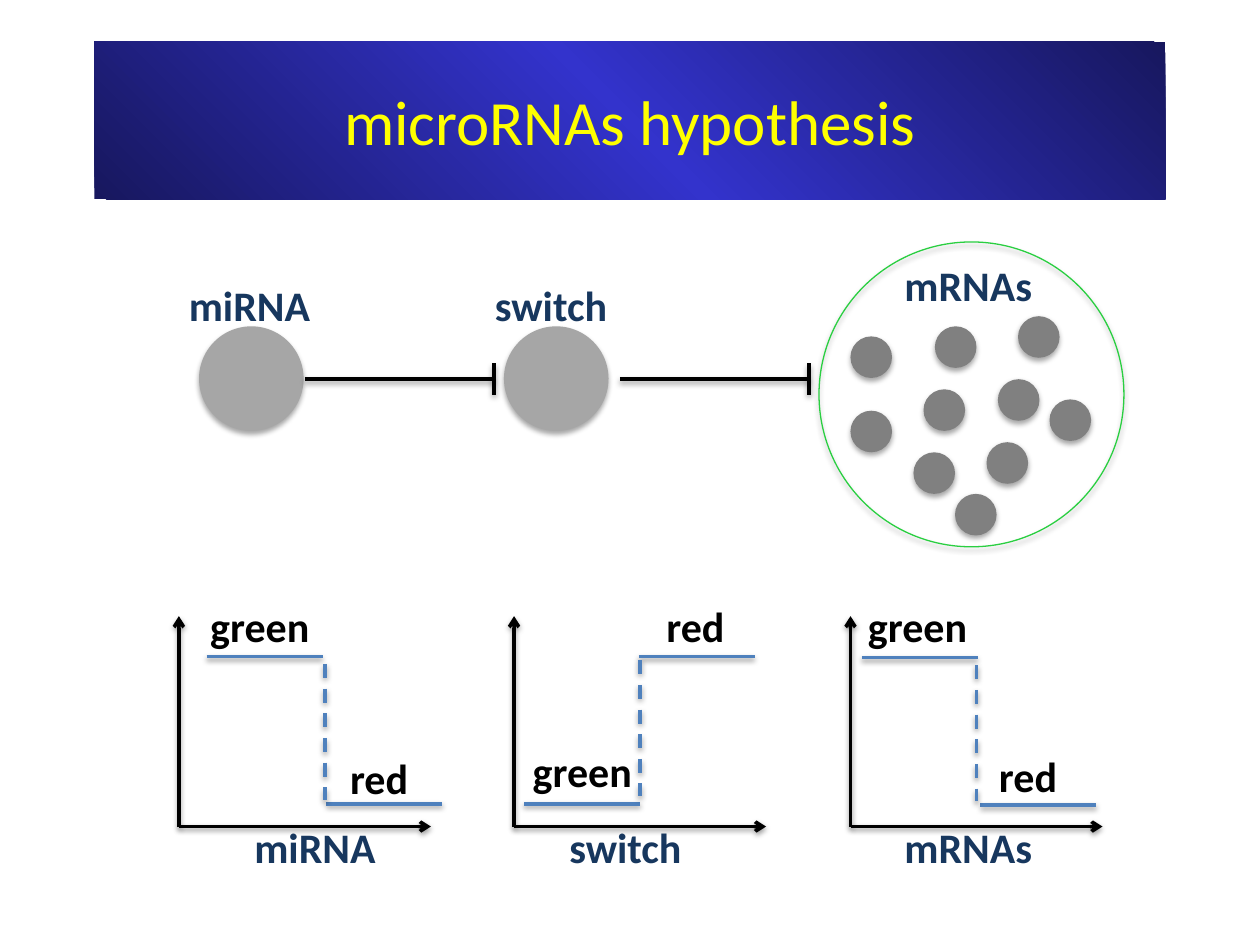
import copy
import pptx
import pptx.util
import pptx.dml.color
import pptx.enum.dml
import pptx.enum.shapes
import pptx.enum.text
import pptx.oxml
from dataclasses import dataclass
from pptx.oxml.ns import qn

Inches = pptx.util.Inches
Pt = pptx.util.Pt
Shape = pptx.enum.shapes.MSO_SHAPE


@dataclass(frozen=True)
class Theme:
    font: str = "Calibri"
    title_size: int = 36
    label_size: int = 24
    title: str = "FFFF00"
    banner_edge: str = "17175E"
    banner_middle: str = "3333CC"
    name: str = "17375E"
    black: str = "000000"
    level: str = "4F81BD"
    node: str = "A6A6A6"
    target: str = "808080"
    ring: str = "2ACF41"
    line_width: float = 2
    ring_width: float = 0.75


THEME = Theme()
WIDTHS = {"miRNA": 1.18, "switch": 1.1, "mRNAs": 1.23, "green": 1, "red": 0.67}
NODE_SIZE, TARGET_SIZE = 0.83, 0.33
AXIS_Y, AXIS_TOP, AXIS_LENGTH = 6.56, 4.89, 2

TARGETS = [
    (6.75, 2.67), (6.75, 3.26), (7.33, 3.09), (7.25, 3.59), (7.83, 3.51),
    (7.92, 3.01), (8.08, 2.51), (8.33, 3.17), (7.42, 2.59), (7.58, 3.92),
]
# Per plot: name, its left, axis x, solid levels (x, y), dashed step, labels
PLOTS = [
    ("miRNA", 1.92, 1.42, [(1.64, 5.21), (2.59, 6.38)], (2.58, 5.27, 6.35),
     [("green", 1.57, 4.72), ("red", 2.68, 5.92)]),
    ("switch", 4.42, 4.08, [(4.16, 6.38), (5.07, 5.21)], (5.08, 5.24, 6.32),
     [("red", 5.19, 4.72), ("green", 4.13, 5.87)]),
    ("mRNAs", 7.08, 6.75, [(6.84, 5.22), (7.78, 6.39)], (7.75, 5.28, 6.36),
     [("green", 6.79, 4.72), ("red", 7.83, 5.91)]),
]
LEVEL_LENGTH = 0.92


def rgb(value):
    return pptx.dml.color.RGBColor.from_string(value)


def add_shadow(item, distance, opacity):
    """Give a shape or connector a soft shadow straight below it."""
    item._element.spPr.append(pptx.oxml.parse_xml(
        '<a:effectLst xmlns:a="http://schemas.openxmlformats.org/drawingml/2006/main">'
        f'<a:outerShdw blurRad="{Pt(3.1)}" dist="{Pt(distance)}" dir="5400000" '
        'rotWithShape="0"><a:srgbClr val="000000">'
        f'<a:alpha val="{opacity * 1000}"/></a:srgbClr></a:outerShdw></a:effectLst>'))


def add_line(page, start, end, color=THEME.black, dashed=False, arrow=False):
    line = page.shapes.add_connector(
        pptx.enum.shapes.MSO_CONNECTOR.STRAIGHT, *map(Inches, (*start, *end)))
    line.line.color.rgb = rgb(color)
    line.line.width = Pt(THEME.line_width)
    if dashed:
        line.line.dash_style = pptx.enum.dml.MSO_LINE.DASH
    if arrow:
        tail = line.line._get_or_add_ln().makeelement(qn("a:tailEnd"), {"type": "arrow"})
        line.line._get_or_add_ln().append(tail)
    add_shadow(line, 1.6, 38)


def add_circle(page, left, top, size, fill=None, outline=None):
    circle = page.shapes.add_shape(
        Shape.OVAL, *map(Inches, (left, top, size, size)))
    if fill:
        circle.fill.solid()
        circle.fill.fore_color.rgb = rgb(fill)
    else:
        circle.fill.background()
    if outline:
        circle.line.color.rgb = rgb(outline)
        circle.line.width = Pt(THEME.ring_width)
    else:
        circle.line.fill.background()
    add_shadow(circle, 1.8, 35)


def write(para, text, size, color, bold):
    span = para.add_run()
    span.text = text
    for key, value in {"name": THEME.font, "size": Pt(size), "bold": bold}.items():
        setattr(span.font, key, value)
    span.font.color.rgb = rgb(color)


def add_label(page, text, left, top, color=THEME.black):
    box = page.shapes.add_textbox(*map(Inches, (left, top, WIDTHS[text], 0.5)))
    frame = box.text_frame
    frame.word_wrap = False
    frame.auto_size = pptx.enum.text.MSO_AUTO_SIZE.SHAPE_TO_FIT_TEXT
    write(frame.paragraphs[0], text, THEME.label_size, color, True)


def add_banner(page, text):
    banner = page.shapes.add_shape(
        Shape.RECTANGLE, *map(Inches, (0.75, 0.33, 8.5, 1.25)))
    banner.shadow.inherit = False
    banner.line.fill.background()
    banner.fill.gradient()
    banner.fill.gradient_angle = 45
    stop_list = banner._element.spPr.find(qn("a:gradFill")).find(qn("a:gsLst"))
    stop_list.insert(1, copy.deepcopy(stop_list[0]))
    colors = (THEME.banner_edge, THEME.banner_middle, THEME.banner_edge)
    for stop, color, position in zip(banner.fill.gradient_stops, colors, (0, 0.5, 1)):
        stop.color.rgb = rgb(color)
        stop.position = position
    banner.text_frame.word_wrap = True
    banner.text_frame.vertical_anchor = pptx.enum.text.MSO_ANCHOR.MIDDLE
    para = banner.text_frame.paragraphs[0]
    para.alignment = pptx.enum.text.PP_ALIGN.CENTER
    write(para, text, THEME.title_size, THEME.title, False)


def add_plot(page, name, name_left, axis_x, levels, step, labels):
    origin = (axis_x, AXIS_Y)
    add_line(page, origin, (axis_x + AXIS_LENGTH, AXIS_Y), arrow=True)
    add_line(page, origin, (axis_x, AXIS_TOP), arrow=True)
    for x, y in levels:
        add_line(page, (x, y), (x + LEVEL_LENGTH, y), THEME.level)
    x, top, bottom = step
    add_line(page, (x, top), (x, bottom), THEME.level, dashed=True)
    add_label(page, name, name_left, 6.47, THEME.name)
    for label in labels:
        add_label(page, *label)


def add_inhibition(page, left, y=3.01, length=1.5, bar=0.25):
    """Draw a line that ends in a crossbar."""
    right = left + length
    add_line(page, (left, y), (right, y))
    add_line(page, (right, y - bar / 2), (right, y + bar / 2))


def add_pathway(page):
    for left in (1.58, 4):
        add_circle(page, left, 2.59, NODE_SIZE, THEME.node)
    for left in (2.42, 4.92):
        add_inhibition(page, left)
    add_circle(page, 6.5, 1.92, 2.42, outline=THEME.ring)
    for left, top in TARGETS:
        add_circle(page, left, top, TARGET_SIZE, THEME.target)
    for text, left, top in (("miRNA", 1.4, 2.17), ("switch", 3.83, 2.17),
                            ("mRNAs", 7.08, 2.01)):
        add_label(page, text, left, top, THEME.name)


def main():
    deck = pptx.Presentation()
    deck.slide_width, deck.slide_height = Inches(10), Inches(7.5)
    page = deck.slides.add_slide(deck.slide_layouts[6])
    for plot in PLOTS:
        add_plot(page, *plot)
    add_pathway(page)
    add_banner(page, "microRNAs hypothesis")
    deck.save("out.pptx")


if __name__ == "__main__":
    main()
